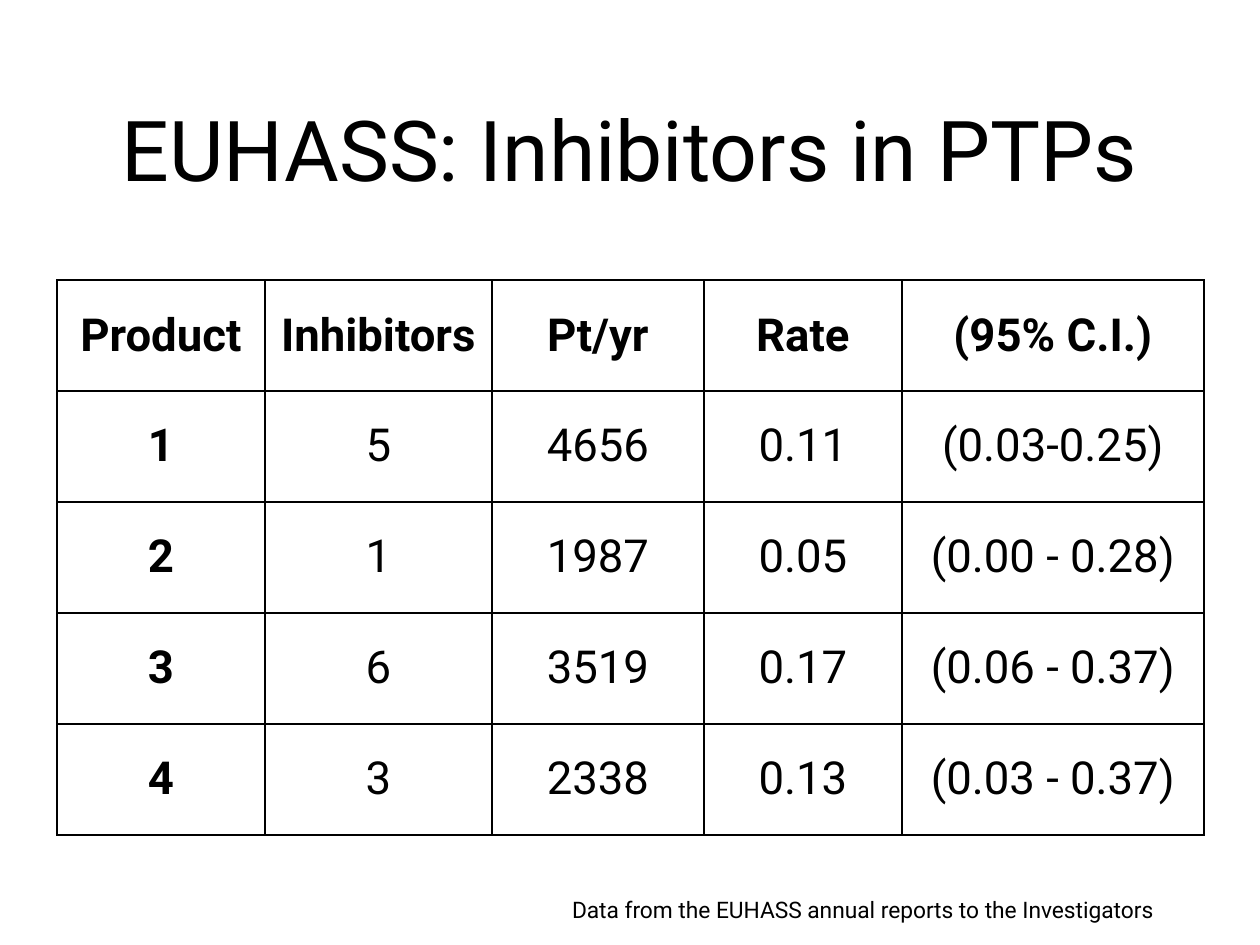
from lxml.etree import SubElement
from pptx import Presentation
from pptx.dml.color import RGBColor
from pptx.enum.text import MSO_ANCHOR, PP_ALIGN
from pptx.oxml.ns import qn
from pptx.util import Emu, Pt

FONT = "Roboto"
BLACK = "000000"
WHITE = "FFFFFF"
COLUMN_WIDTHS = (208, 227, 212, 198, 302)
ROW_HEIGHT = 111
ROWS = (
    ("Product", "Inhibitors", "Pt/yr", "Rate", "(95% C.I.)"),
    ("1", "5", "4656", "0.11", "(0.03-0.25)"),
    ("2", "1", "1987", "0.05", "(0.00 - 0.28)"),
    ("3", "6", "3519", "0.17", "(0.06 - 0.37)"),
    ("4", "3", "2338", "0.13", "(0.03 - 0.37)"),
)


def px(length):
    """Turn pixels into EMU at 126 pixels to the inch."""
    return Emu(round(length * 914400 / 126))


def color(value):
    """Return the colour of a hex string."""
    return RGBColor.from_string(value)


def write(frame, text, size=26, bold=False, fill=BLACK, align=PP_ALIGN.CENTER):
    """Write one formatted paragraph into a text frame."""
    para = frame.paragraphs[0]
    para.alignment = align
    span = para.add_run()
    span.text = text
    span.font.name = FONT
    span.font.size = Pt(size)
    span.font.bold = bold
    span.font.color.rgb = color(fill)


def set_frame(frame, wrap):
    """Remove the insets of a text frame and centre it vertically."""
    frame.margin_left = frame.margin_top = frame.margin_right = frame.margin_bottom = 0
    frame.vertical_anchor = MSO_ANCHOR.MIDDLE
    frame.word_wrap = wrap


def add_borders(cell, width=1, fill=BLACK):
    """Draw a solid line on the four sides of a cell."""
    properties = cell._tc.get_or_add_tcPr()
    for index, side in enumerate(("a:lnL", "a:lnR", "a:lnT", "a:lnB")):
        line = properties.makeelement(qn(side), {"w": str(Pt(width))})
        solid = SubElement(line, qn("a:solidFill"))
        SubElement(solid, qn("a:srgbClr"), val=fill)
        properties.insert(index, line)


def place_title(page, left, top, width, height):
    """Place the slide title."""
    title = page.shapes.title
    title.left, title.top, title.width, title.height = map(px, (left, top, width, height))
    set_frame(title.text_frame, True)
    write(title.text_frame, "EUHASS: Inhibitors in PTPs", size=48)


def place_table(page, left, top):
    """Place the table of inhibitor rates by product."""
    width, height = sum(COLUMN_WIDTHS), ROW_HEIGHT * len(ROWS)
    table = page.shapes.add_table(
        len(ROWS), len(COLUMN_WIDTHS), px(left), px(top), px(width), px(height)
    ).table
    table.horz_banding = False
    for column, column_width in zip(table.columns, COLUMN_WIDTHS):
        column.width = px(column_width)
    for row_index, values in enumerate(ROWS):
        table.rows[row_index].height = px(ROW_HEIGHT)
        for column_index, text in enumerate(values):
            cell = table.cell(row_index, column_index)
            cell.margin_left = cell.margin_right = px(5)
            cell.margin_top = cell.margin_bottom = px(5)
            cell.vertical_anchor = MSO_ANCHOR.MIDDLE
            cell.fill.solid()
            cell.fill.fore_color.rgb = color(WHITE)
            add_borders(cell)
            write(cell.text_frame, text, bold=row_index == 0 or column_index == 0)


def place_source(page, left, top, width, height):
    """Place the note on where the data come from."""
    box = page.shapes.add_textbox(px(left), px(top), px(width), px(height))
    set_frame(box.text_frame, False)
    write(box.text_frame, "Data from the EUHASS annual reports to the Investigators", size=13)


def main():
    """Build the slide and save the deck."""
    deck = Presentation()
    deck.slide_width, deck.slide_height = px(1260), px(945)
    page = deck.slides.add_slide(deck.slide_layouts[5])
    place_title(page, 92, 43, 1076, 209)
    place_table(page, 57, 280)
    place_source(page, 566, 895, 593, 28)
    deck.save("out.pptx")


if __name__ == "__main__":
    main()
